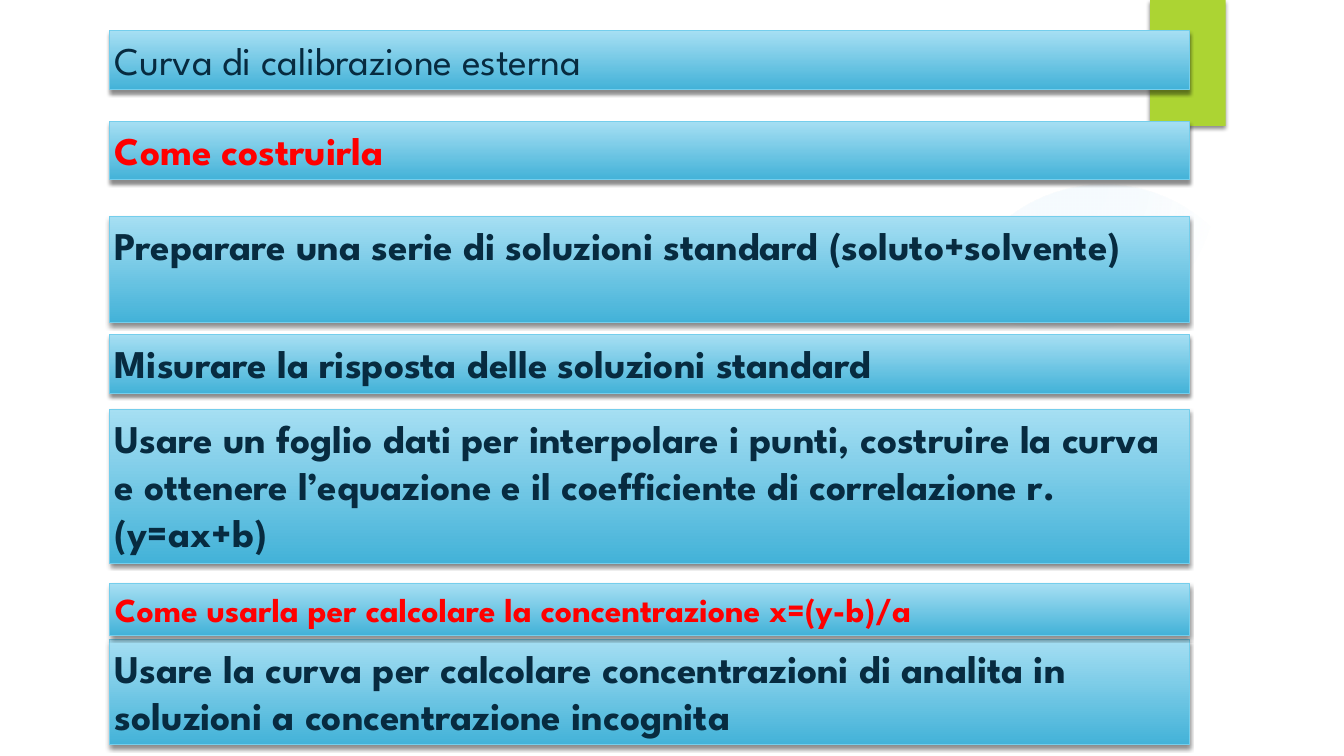
import pptx
import pptx.util
import pptx.oxml
import pptx.oxml.ns
import pptx.dml.color
import pptx.enum.shapes
import pptx.enum.text

Pt = pptx.util.Pt
RGB = pptx.dml.color.RGBColor.from_string
MSO = pptx.enum.shapes.MSO_SHAPE
NS = pptx.oxml.ns.nsdecls("a")
COLORS = {"top": "A6DFF3", "bottom": "43B2D8", "line": "75CEEC", "text": "072B40",
          "red": "FF0000", "green": "ACD433", "glow": "7AC4F0", "shadow": "000000"}


def add_shadow(sp):
    sp.shadow.inherit = False
    effects = sp._element.spPr.find(pptx.oxml.ns.qn("a:effectLst"))
    effects.append(pptx.oxml.parse_xml(
        f'<a:outerShdw {NS} blurRad="{Pt(3)}" dist="{Pt(2)}" dir="5400000" rotWithShape="0">'
        f'<a:srgbClr val="{COLORS["shadow"]}"><a:alpha val="45000"/></a:srgbClr></a:outerShdw>'))


prs = pptx.Presentation()
prs.slide_width, prs.slide_height = Pt(960), Pt(540)
s = prs.slides.add_slide(prs.slide_layouts[5])

glow = s.shapes.add_shape(MSO.OVAL, Pt(677.5), Pt(131.8), Pt(221.8), Pt(221.8))
glow.shadow.inherit = False
glow.line.fill.background()
stops = "".join(
    f'<a:gs pos="{pos}000"><a:srgbClr val="{COLORS["glow"]}"><a:alpha val="{alpha}000"/></a:srgbClr></a:gs>'
    for pos, alpha in [(0, 7), (36, 6), (69, 0)])
glow._element.spPr.insert(2, pptx.oxml.parse_xml(
    f'<a:gradFill {NS} rotWithShape="1"><a:gsLst>{stops}</a:gsLst><a:path path="circle">'
    '<a:fillToRect l="38000" t="-20000" r="62000" b="120000"/></a:path></a:gradFill>'))

tab = s.shapes.add_shape(MSO.RECTANGLE, Pt(821.5), 0, Pt(54), Pt(90))
tab.fill.solid()
tab.fill.fore_color.rgb = RGB(COLORS["green"])
tab.line.fill.background()
add_shadow(tab)

BARS = [
    (22, 42, "Curva di calibrazione esterna", 28, False, "text"),
    (86.5, 42, "Come costruirla", 28, True, "red"),
    (154.8, 75.6, "Preparare una serie di soluzioni standard (soluto+solvente)", 28, True, "text"),
    (239, 42, "Misurare la risposta delle soluzioni standard", 28, True, "text"),
    (292.3, 110.2, "Usare un foglio dati per interpolare i punti, costruire la curva e ottenere "
     "l’equazione e il coefficiente di correlazione r. (y=ax+b)", 28, True, "text"),
    (456.5, 75.6, "Usare la curva per calcolare concentrazioni di analita in soluzioni a "
     "concentrazione incognita", 28, True, "text"),
    (417, 36.7, "Come usarla per calcolare la concentrazione x=(y-b)/a", 24, True, "red"),
]
FRAME = {"word_wrap": True, "auto_size": pptx.enum.text.MSO_AUTO_SIZE.NONE,
         "vertical_anchor": pptx.enum.text.MSO_ANCHOR.TOP,
         "margin_left": Pt(3.6), "margin_right": Pt(3.6),
         "margin_top": Pt(3.6), "margin_bottom": Pt(3.6)}

for i, (top, height, text, size, bold, color) in enumerate(BARS):
    box = {"left": Pt(78.5), "top": Pt(top), "width": Pt(771), "height": Pt(height)}
    if i == 0:
        sp = s.shapes.title
        s.shapes._spTree.append(sp._element)
        for key, value in box.items():
            setattr(sp, key, value)
    else:
        sp = s.shapes.add_shape(MSO.RECTANGLE, *box.values())
    sp.fill.gradient()
    sp.fill.gradient_angle = 270
    for stop, name in zip(sp.fill.gradient_stops, ["top", "bottom"]):
        stop.color.rgb = RGB(COLORS[name])
    sp.line.color.rgb = RGB(COLORS["line"])
    sp.line.width = Pt(0.75)
    add_shadow(sp)
    tf = sp.text_frame
    for key, value in FRAME.items():
        setattr(tf, key, value)
    p = tf.paragraphs[0]
    p.alignment = pptx.enum.text.PP_ALIGN.LEFT
    r = p.add_run()
    r.text = text
    for key, value in {"name": "League Spartan", "size": Pt(size), "bold": bold}.items():
        setattr(r.font, key, value)
    r.font.color.rgb = RGB(COLORS[color])

prs.save("out.pptx")
